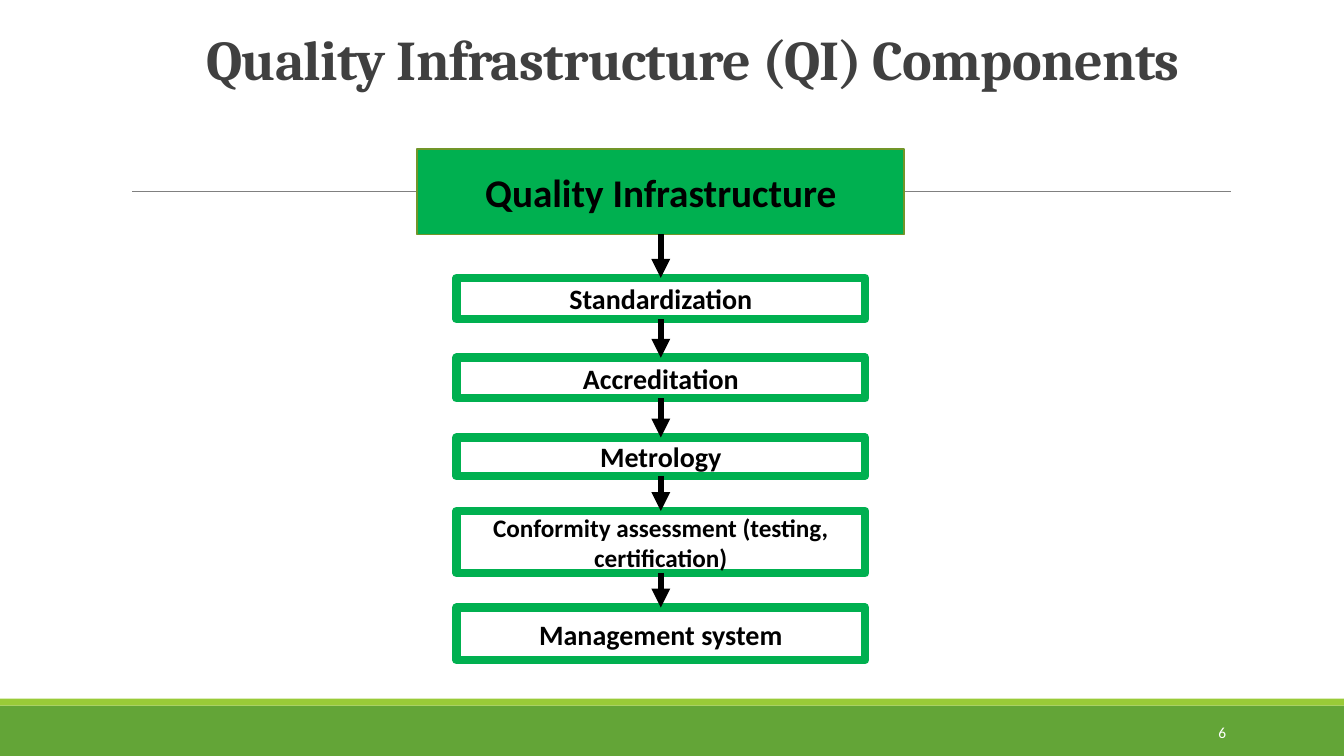
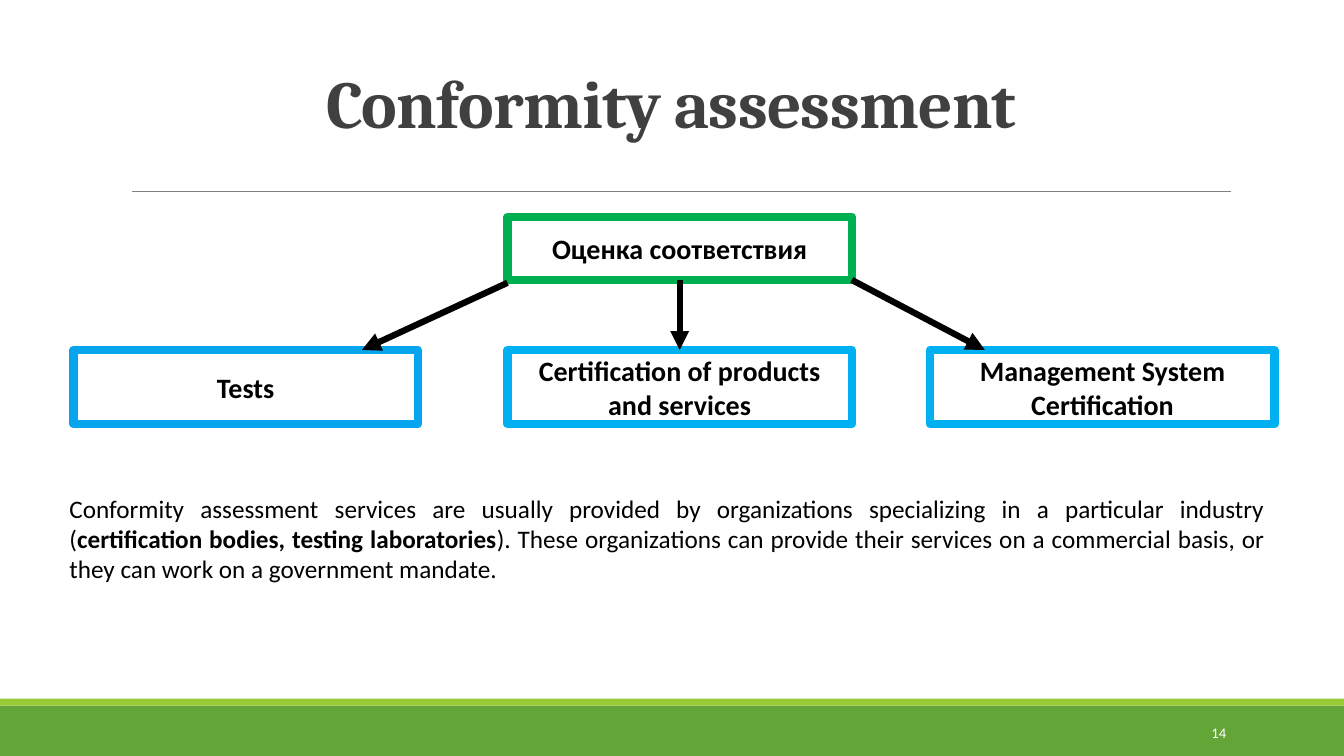
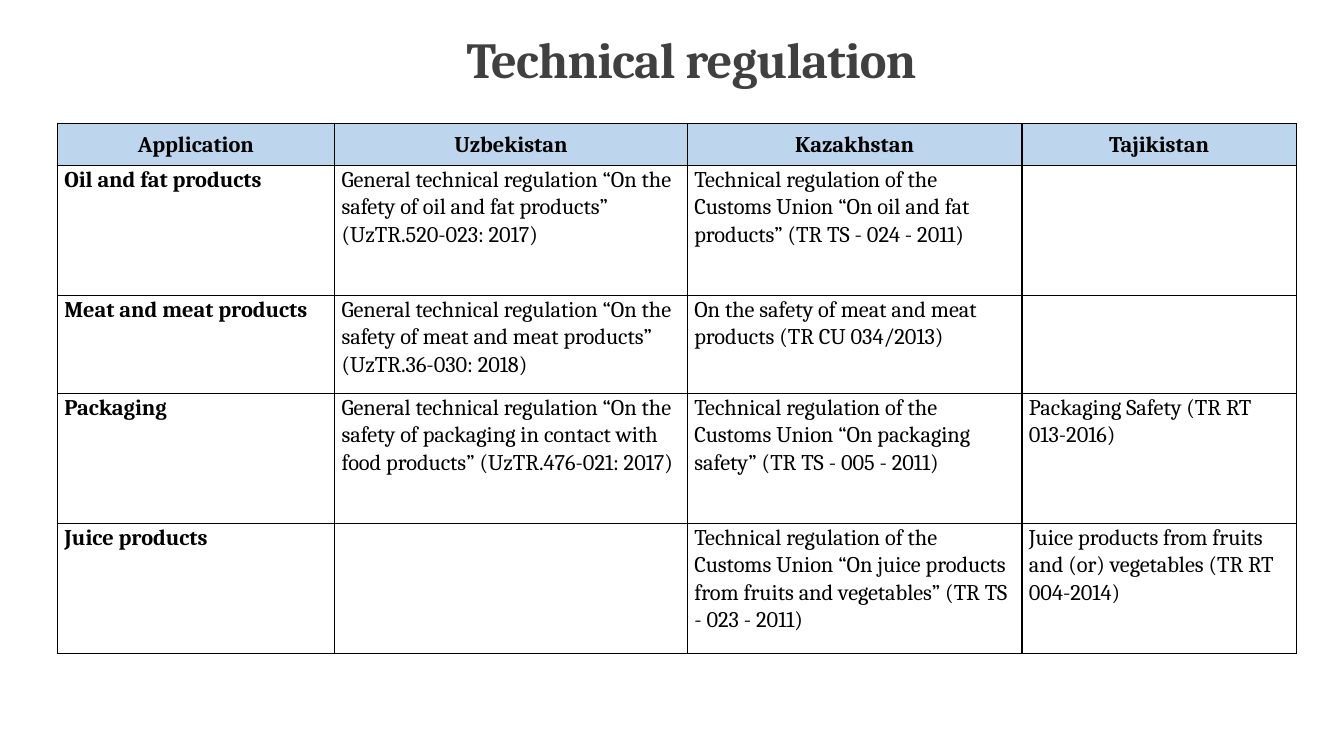
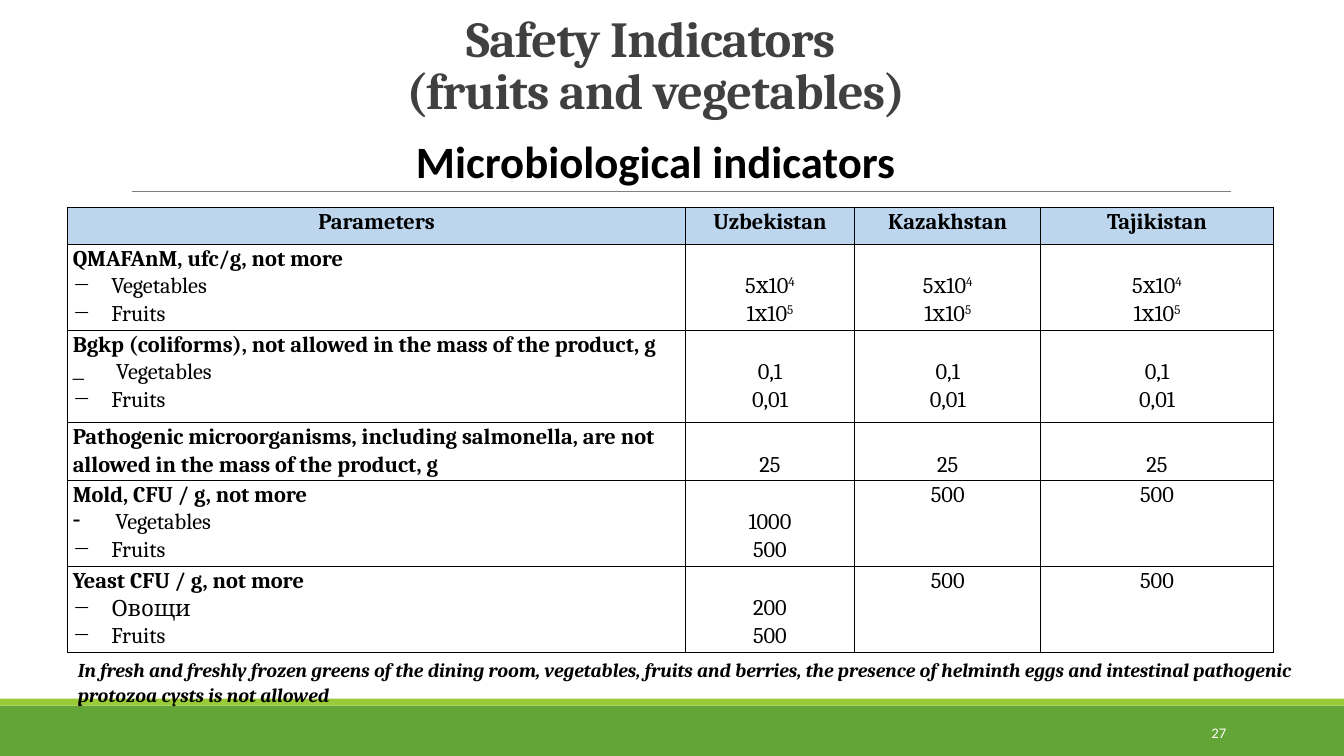
from dataclasses import dataclass

from lxml.etree import SubElement
from pptx import Presentation
from pptx.dml.color import RGBColor
from pptx.enum.shapes import MSO_CONNECTOR, MSO_SHAPE
from pptx.enum.text import MSO_ANCHOR, PP_ALIGN
from pptx.oxml.ns import qn
from pptx.util import Pt


@dataclass(frozen=True)
class Theme:
    black: str = "000000"
    white: str = "FFFFFF"
    ink: str = "404040"
    rule: str = "808080"
    band: str = "63A537"
    strip: str = "99CB38"
    green: str = "00B050"
    olive: str = "719629"
    sky: str = "00B0F0"
    azure: str = "08A5EF"
    head: str = "BDD6EE"
    body: str = "Calibri"
    serif: str = "Cambria"
    huge: int = 48
    large: int = 40
    title: int = 36
    sub: int = 32
    lead: int = 28
    label: int = 20
    text: int = 18
    cell: int = 16
    note: int = 14
    page: float = 10.5
    loose: float = 1.07
    tight: float = 0.85


T = Theme()
WIDE, HIGH = 960, 540
LEFT, MID, RIGHT, FULL = PP_ALIGN.LEFT, PP_ALIGN.CENTER, PP_ALIGN.RIGHT, PP_ALIGN.JUSTIFY


@dataclass
class Cell:
    lines: tuple = ()
    bold: bool = False
    align: PP_ALIGN = LEFT
    drop: float = 0


def rgb(code):
    return RGBColor.from_string(code)


def pts(box):
    return [Pt(v) for v in box]


def apply(target, look):
    for key, value in look.items():
        setattr(target, key, value)


def write(frame, lines, size, color=T.black, face=T.body, track=None, para=None, **font):
    """Each line is a string, or a list of (text, font values, baseline) runs."""
    for i, line in enumerate(lines):
        p = frame.add_paragraph() if i else frame.paragraphs[0]
        apply(p, para or {})
        for text, extra, base in [(line, {}, None)] if isinstance(line, str) else line:
            run = p.add_run()
            run.text = text
            apply(run.font, {"name": face, "size": Pt(size), **font, **extra})
            run.font.color.rgb = rgb(color)
            for key, value in (("spc", track), ("baseline", base)):
                if value:
                    run._r.get_or_add_rPr().set(key, str(value))


def mark(p, sign, inset):
    """Hang a bullet sign in front of a paragraph."""
    pr = p._p.get_or_add_pPr()
    pr.set("marL", str(Pt(inset)))
    pr.set("indent", str(-Pt(inset)))
    SubElement(pr, qn("a:buChar")).set("char", sign)


def label(slide, box, lines, size, anchor=MSO_ANCHOR.TOP, wrap=True, **look):
    frame = slide.shapes.add_textbox(*pts(box)).text_frame
    apply(frame, {"word_wrap": wrap, "vertical_anchor": anchor})
    write(frame, lines, size, **look)


def block(slide, box, fill, edge=None, width=6, text=None, size=T.label):
    shape = slide.shapes.add_shape(MSO_SHAPE.RECTANGLE, *pts(box))
    shape.shadow.inherit = False
    shape.fill.solid()
    shape.fill.fore_color.rgb = rgb(fill)
    if edge:
        shape.line.color.rgb = rgb(edge)
        shape.line.width = Pt(width)
    else:
        shape.line.fill.background()
    if text:
        apply(shape.text_frame, {"word_wrap": True, "vertical_anchor": MSO_ANCHOR.MIDDLE})
        write(shape.text_frame, [text], size, para={"alignment": MID}, bold=True)
    return shape


def line(slide, ends, color=T.black, width=4.5, arrow=True):
    link = slide.shapes.add_connector(MSO_CONNECTOR.STRAIGHT, *pts(ends))
    link.line.color.rgb = rgb(color)
    link.line.width = Pt(width)
    if arrow:
        SubElement(link.line._get_or_add_ln(), qn("a:tailEnd")).set("type", "triangle")
    SubElement(link._element.spPr, qn("a:effectLst"))
    return link


def join(slide, upper, lower):
    link = line(slide, (0, 0, 0, 0))
    link.begin_connect(upper, 2)
    link.end_connect(lower, 0)


def title(slide, box, lines, size, lead=T.tight):
    label(slide, box, lines, size, MSO_ANCHOR.BOTTOM, color=T.ink, face=T.serif, track=-50,
          para={"alignment": MID, "line_spacing": lead}, bold=True)


def base(slide, page, size=T.page):
    """Bands, rule and page number."""
    block(slide, (0, 504, WIDE, 36), T.band)
    block(slide, (0, 499, WIDE, 5), T.strip)
    line(slide, (94.5, 136.5, 879, 136.5), T.rule, 0.5, False)
    label(slide, (780, 508.5, 103, 29), [str(page)], size, MSO_ANCHOR.MIDDLE,
          color=T.white, para={"alignment": RIGHT})


def chain(slide, box, top, steps):
    """A head block, then narrower blocks below it, each joined to the last."""
    x, y, w, h = box
    last = block(slide, (x, y, w, 61), T.green, T.olive, 1.25, top, T.lead)
    for text, dy, high, size in steps:
        step = block(slide, (x + 28, y + dy, w - 56, high), T.white, T.green, text=text, size=size)
        join(slide, last, step)
        last = step


def tree(slide, box, top, leaves):
    """A root block with three leaves at the foot of the box."""
    x, y, w, h = box
    wide, high, deep = 246, 45, 53
    root = block(slide, (x + 310, y, wide, high), T.white, T.green, text=top)
    row = [block(slide, (x + dx, y + h - deep, wide, deep), T.white, edge, text=text)
           for text, dx, edge in leaves]
    join(slide, root, row[1])
    foot = y + h - deep
    line(slide, (x + 310, y + high + 2, x + 206, foot))
    line(slide, (x + 310 + wide, y + high, x + 651, foot))


def border(cell):
    pr = cell._tc.get_or_add_tcPr()
    for side in ("lnL", "lnR", "lnT", "lnB"):
        ln = SubElement(pr, qn("a:" + side))
        ln.set("w", str(Pt(1)))
        SubElement(SubElement(ln, qn("a:solidFill")), qn("a:srgbClr")).set("val", T.black)


def grid(slide, box, cols, heights, heads, rows, pad, anchor):
    table = slide.shapes.add_table(len(heights), len(cols), *pts(box)).table
    apply(table, {"first_row": False, "horz_banding": False})
    for col, wide in zip(table.columns, cols):
        col.width = Pt(wide)
    for row, high in zip(table.rows, heights):
        row.height = Pt(high)
    top = [Cell((head,), True, MID) for head in heads]
    for r, row in enumerate([top, *rows]):
        for c, item in enumerate(row):
            cell = table.cell(r, c)
            apply(cell, {"margin_left": Pt(pad), "margin_right": Pt(pad),
                         "margin_top": Pt(item.drop), "margin_bottom": 0,
                         "vertical_anchor": MSO_ANCHOR.TOP if r else anchor})
            border(cell)
            if r:
                cell.fill.background()
            else:
                cell.fill.solid()
                cell.fill.fore_color.rgb = rgb(T.head)
            write(cell.text_frame, item.lines, T.cell, face=T.serif, bold=item.bold,
                  para={"alignment": item.align, "line_spacing": T.loose})
    return table


def parts(slide):
    base(slide, 6, 11)
    chain(slide, (298, 106.5, 348, 365), "Quality Infrastructure", [
        ("Standardization", 92, 29.5, T.label),
        ("Accreditation", 149, 29, T.label),
        ("Metrology", 206, 27.5, T.label),
        ("Conformity assessment (testing, certification)", 258.5, 44.5, T.text),
        ("Management system", 327.5, 37.5, T.label),
    ])
    title(slide, (55.5, 11.5, 879, 57.5), ["Quality Infrastructure (QI) Components"], T.large)


def assess(slide):
    base(slide, 14)
    title(slide, (83.5, -9.5, 792, 114.5), ["Conformity assessment"], T.huge)
    tree(slide, (52.5, 155, 858, 148), "Оценка соответствия", [
        ("Tests", 0, T.azure),
        ("Certification of products and services", 310, T.sky),
        ("Management System Certification", 612, T.sky),
    ])
    label(slide, (42.5, 348.5, 868, 73), [[
        ("Conformity assessment services are usually provided by organizations "
         "specializing in a particular industry (", {}, None),
        ("certification bodies, testing laboratories", {"bold": True}, None),
        ("). These organizations can provide their services on a commercial basis, "
         "or they can work on a government mandate.", {}, None),
    ]], T.text, para={"alignment": FULL})


def rules(slide):
    title(slide, (98, 13, 792, 54), ["Technical regulation"], T.title, 1.0)
    texts = [
        ("Oil and fat products",
         "General technical regulation “On the safety of oil and fat products” (UzTR.520-023: 2017)",
         "Technical regulation of the Customs Union “On oil and fat products” (TR TS - 024 - 2011)",
         ""),
        ("Meat and meat products",
         "General technical regulation “On the safety of meat and meat products” (UzTR.36-030: 2018)",
         "On the safety of meat and meat products (TR CU 034/2013)",
         ""),
        ("Packaging",
         "General technical regulation “On the safety of packaging in contact with food products” "
         "(UzTR.476-021: 2017)",
         "Technical regulation of the Customs Union “On packaging safety” (TR TS - 005 - 2011)",
         "Packaging Safety (TR RT 013-2016)"),
        ("Juice products",
         "",
         "Technical regulation of the Customs Union “On juice products from fruits and vegetables” "
         "(TR TS - 023 - 2011)",
         "Juice products from fruits and (or) vegetables (TR RT 004-2014)"),
    ]
    rows = [[Cell((text,) if text else (), bold=not c) for c, text in enumerate(row)]
            for row in texts]
    grid(slide, (41, 88.5, 885, 378.5), (198, 252, 239, 196), (29.5, 93, 70, 93, 93),
         ("Application", "Uzbekistan", "Kazakhstan", "Tajikistan"), rows, 5,
         MSO_ANCHOR.MIDDLE)


def power(text, top):
    return [(text, {}, None), (top, {}, 30000)]


def safety(slide):
    base(slide, 27)
    title(slide, (72.5, 30, 792, 59), ["Safety Indicators ", "(fruits and vegetables)"], T.title)
    label(slide, (288.5, 89.5, 360, 47), ["Microbiological indicators"], T.sub, wrap=False,
          para={"alignment": MID, "line_spacing": T.loose, "space_after": Pt(8)}, bold=True)

    def low(*lines):
        """Values that start on the second line of the row."""
        return Cell(lines, align=MID, drop=19.6)

    dash, plain = ("−", 27.5), {"bold": False}
    counts = low(power("5х10", "4"), power("1х10", "5"))
    mass, none, cap = low("0,1", "0,01"), low("25"), Cell(("500",), align=MID)
    data = [
        ("QMAFAnM, ufc/g, not more", (dash, dash), "Vegetables", [counts] * 3),
        ("Bgkp (coliforms), not allowed in the mass of the product, g",
         (("_", 31), dash), "Vegetables", [mass] * 3),
        ("Pathogenic microorganisms, including salmonella, are not allowed "
         "in the mass of the product, g", (), "", [none] * 3),
        ("Mold, CFU / g, not more", (("-", 30.5), dash), "Vegetables",
         [low("1000", "500"), cap, cap]),
        ("Yeast CFU / g, not more", (dash, dash), "Овощи", [low("200", "500"), cap, cap]),
    ]
    rows = []
    for head, signs, first, values in data:
        items = [[(text, plain, None)] for text, _ in zip((first, "Fruits"), signs)]
        rows.append([Cell((head, *items), True), *values])
    table = grid(slide, (48.5, 148, 861, 292.5), (441, 121, 133, 166),
                 (26.5, 53, 66, 41, 53, 53),
                 ("Parameters", "Uzbekistan", "Kazakhstan", "Tajikistan"), rows, 3.5,
                 MSO_ANCHOR.TOP)
    for r, (_, signs, _, _) in enumerate(data, 1):
        for p, sign in zip(table.cell(r, 0).text_frame.paragraphs[1:], signs):
            mark(p, *sign)
    label(slide, (48.5, 465, 919.5, 44), [
        "In fresh and freshly frozen greens of the dining room, vegetables, fruits and berries, "
        "the presence of helminth eggs and intestinal pathogenic protozoa cysts is not allowed"],
        T.note, face=T.serif, para={"line_spacing": T.loose, "space_after": Pt(8)},
        bold=True, italic=True)


def main():
    deck = Presentation()
    apply(deck, {"slide_width": Pt(WIDE), "slide_height": Pt(HIGH)})
    for build in (parts, assess, rules, safety):
        build(deck.slides.add_slide(deck.slide_layouts[6]))
    deck.save("out.pptx")


if __name__ == "__main__":
    main()
